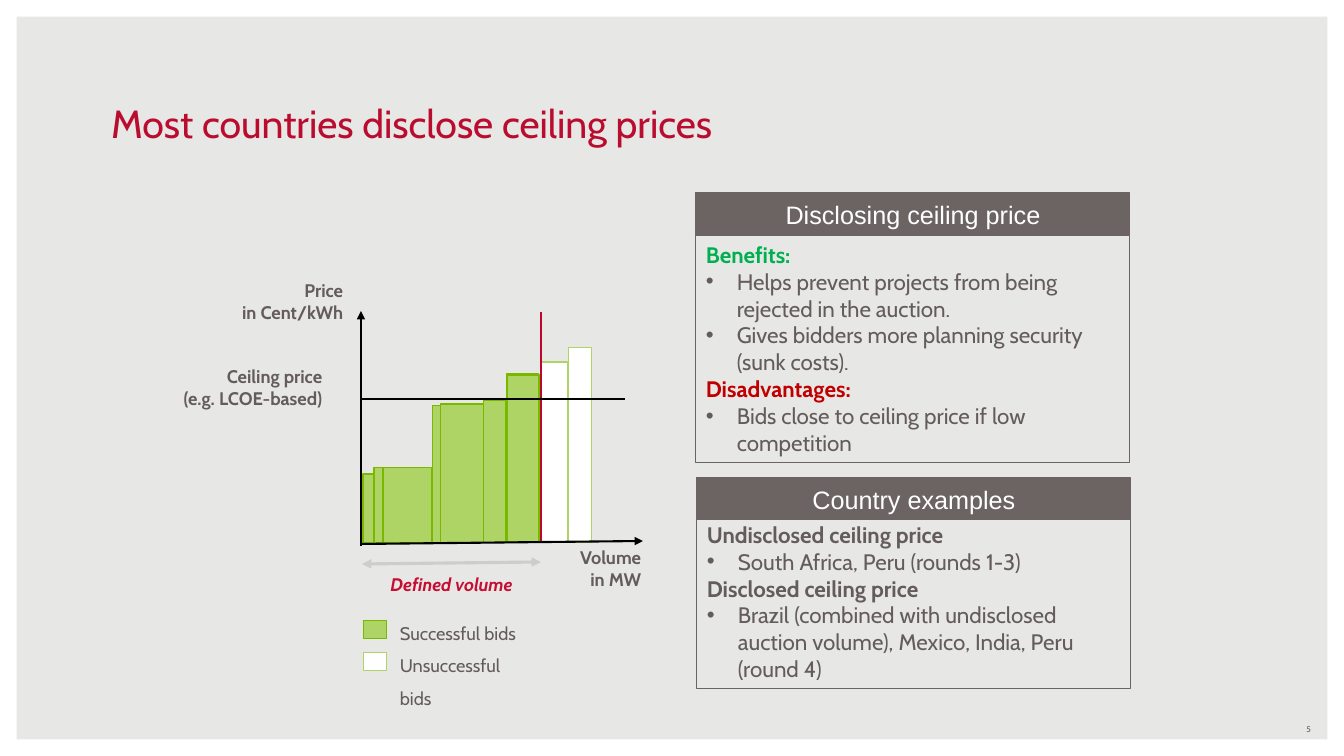
"""Builds the slide on disclosing ceiling prices in auctions."""
from lxml import etree
from pptx import Presentation
from pptx.dml.color import RGBColor
from pptx.enum.shapes import MSO_CONNECTOR, MSO_SHAPE
from pptx.enum.text import MSO_ANCHOR, MSO_AUTO_SIZE, PP_ALIGN
from pptx.oxml.ns import qn
from pptx.util import Pt

PX = 914400 / 100.8
RECT, FRAME = MSO_SHAPE.RECTANGLE, MSO_SHAPE.FRAME
STRAIGHT = MSO_CONNECTOR.STRAIGHT
LEFT, CENTER, RIGHT = PP_ALIGN.LEFT, PP_ALIGN.CENTER, PP_ALIGN.RIGHT
TOP, MIDDLE, BOTTOM = MSO_ANCHOR.TOP, MSO_ANCHOR.MIDDLE, MSO_ANCHOR.BOTTOM

BACKGROUND = RGBColor(0xE7, 0xE7, 0xE5)
WHITE = RGBColor(0xFF, 0xFF, 0xFF)
BLACK = RGBColor(0, 0, 0)
TITLE_RED = RGBColor(0xBA, 0x0C, 0x2F)
VOLUME_RED = RGBColor(0xC6, 0x0C, 0x30)
LIMIT_RED = RGBColor(0xBA, 0x07, 0x2B)
HEADER_GREY = RGBColor(0x6C, 0x64, 0x63)
TEXT_GREY = RGBColor(0x63, 0x5C, 0x5B)
ARROW_GREY = RGBColor(0xCF, 0xCD, 0xC9)
GREEN = RGBColor(0xAF, 0xD4, 0x66)
DARK_GREEN = RGBColor(0x7A, 0xB8, 0x00)
BENEFIT_GREEN = RGBColor(0x00, 0xB0, 0x50)
DRAWBACK_RED = RGBColor(0xC0, 0, 0)

prs = Presentation()
prs.slide_width, prs.slide_height = round(1344 * PX), round(756 * PX)
s = prs.slides.add_slide(prs.slide_layouts[5])
s.background.fill.solid()
s.background.fill.fore_color.rgb = BACKGROUND


def add_box(box, fill=None, line=None, kind=RECT):
    sp = s.shapes.add_shape(kind, *(round(v * PX) for v in box))
    sp.shadow.inherit = False
    if fill is None:
        sp.fill.background()
    else:
        sp.fill.solid()
        sp.fill.fore_color.rgb = fill
    if line is None:
        sp.line.fill.background()
    else:
        sp.line.color.rgb = line
        sp.line.width = Pt(0.75)
    return sp


def write(sp, lines, size, color, align=LEFT, anchor=TOP, font="Cabin", bold=False):
    tf = sp.text_frame
    tf.word_wrap = True
    tf.auto_size = MSO_AUTO_SIZE.NONE
    tf.vertical_anchor = anchor
    tf.text = "\n".join(lines)
    for p in tf.paragraphs:
        p.alignment = align
        for r in p.runs:
            r.font.name, r.font.size, r.font.bold = font, Pt(size), bold
            r.font.color.rgb = color
    return tf


frame = add_box((0, 0, 1344, 756), WHITE, kind=FRAME)
frame.adjustments[0] = 0.022

title = s.shapes.title
title.left, title.top, title.width, title.height = (
    round(v * PX) for v in (101, 94, 1142, 57))
write(title, ["Most countries disclose ceiling prices"], 28, TITLE_RED, anchor=BOTTOM)

panels = [
    ((696, 236, 434, 227), 193, "Disclosing ceiling price", [
        ("Benefits:", BENEFIT_GREEN),
        ("Helps prevent projects from being rejected in the auction.", None),
        ("Gives bidders more planning security (sunk costs).", None),
        ("Disadvantages:", DRAWBACK_RED),
        ("Bids close to ceiling price if low competition", None)]),
    ((697, 516, 434, 173), 478, "Country examples", [
        ("Undisclosed ceiling price", TEXT_GREY),
        ("South Africa, Peru (rounds 1-3)", None),
        ("Disclosed ceiling price", TEXT_GREY),
        ("Brazil (combined with undisclosed auction volume), Mexico, India, Peru (round 4)",
         None)]),
]
for box, header_top, heading, items in panels:
    body = add_box(box, line=HEADER_GREY)
    tf = write(body, [text for text, _ in items], 16, TEXT_GREY)
    for p, (_, heading_color) in zip(tf.paragraphs, items):
        if heading_color is not None:
            p.runs[0].font.bold = True
            p.runs[0].font.color.rgb = heading_color
            continue
        pPr = p._p.get_or_add_pPr()
        pPr.set("marL", str(round(31 * PX)))
        pPr.set("indent", str(round(-31 * PX)))
        etree.SubElement(pPr, qn("a:buFont")).set("typeface", "Arial")
        etree.SubElement(pPr, qn("a:buChar")).set("char", "•")
    header = add_box((box[0], header_top, box[2], 42), HEADER_GREY, HEADER_GREY)
    write(header, [heading], 18, WHITE, CENTER, MIDDLE, "Arial")

BASELINE = 543
successful = [(363, 474, 11), (374, 468, 9), (383, 468, 49), (433, 406, 8),
              (441, 404, 43), (484, 401, 22), (508, 375, 32)]
unsuccessful = [(541, 362, 27), (569, 348, 23)]
for bids, fill, line in ((successful, GREEN, DARK_GREEN), (unsuccessful, WHITE, GREEN)):
    for left, top, width in bids:
        add_box((left, top, width, BASELINE - top), fill, line)
add_box((507, 374, 32, 168), line=DARK_GREEN)
add_box((364, 621, 23, 18), GREEN, DARK_GREEN)
add_box((364, 653, 23, 18), WHITE, GREEN)

lines = [
    ((541, 562, 362, 564), ARROW_GREY, 2.25, ("headEnd", "tailEnd")),
    ((541, 312, 541, BASELINE), LIMIT_RED, 1.5, ()),
    ((361, 544, 643, 541), BLACK, 1.5, ("tailEnd",)),
    ((361, 546, 361, 311), BLACK, 1.5, ("tailEnd",)),
    ((361, 399, 625, 399), BLACK, 1.5, ()),
]
for ends, color, width, arrowheads in lines:
    cx = s.shapes.add_connector(STRAIGHT, *(round(v * PX) for v in ends))
    cx.line.color.rgb = color
    cx.line.width = Pt(width)
    for end in arrowheads:
        etree.SubElement(cx.line._get_or_add_ln(), qn(f"a:{end}")).set("type", "triangle")
    etree.SubElement(cx._element.spPr, qn("a:effectLst"))

labels = [
    ((222, 274, 131, 54), ["Price", "in Cent/kWh"], 13, TEXT_GREY, RIGHT, True, None),
    ((153, 360, 179, 54), ["Ceiling price", "(e.g. LCOE-based)"], 13, TEXT_GREY, RIGHT,
     True, None),
    ((565, 541, 86, 54), ["Volume", "in MW"], 13, TEXT_GREY, RIGHT, True, None),
    ((378, 561, 147, 37), ["Defined volume"], 13, VOLUME_RED, CENTER, True, Pt(21)),
    ((390, 606, 151, 73), ["Successful bids", "Unsuccessful bids"], 13, TEXT_GREY, LEFT,
     False, 1.5),
    ((1008, 719, 313, 20), ["5"], 6, HEADER_GREY, RIGHT, False, None),
]
for box, text, size, color, align, bold, spacing in labels:
    tb = s.shapes.add_textbox(*(round(v * PX) for v in box))
    anchor = MIDDLE if text == ["5"] else TOP
    tf = write(tb, text, size, color, align, anchor, bold=bold)
    for p in tf.paragraphs:
        p.line_spacing = spacing
        if color == VOLUME_RED:
            p.runs[0].font.italic = True

prs.save("out.pptx")
